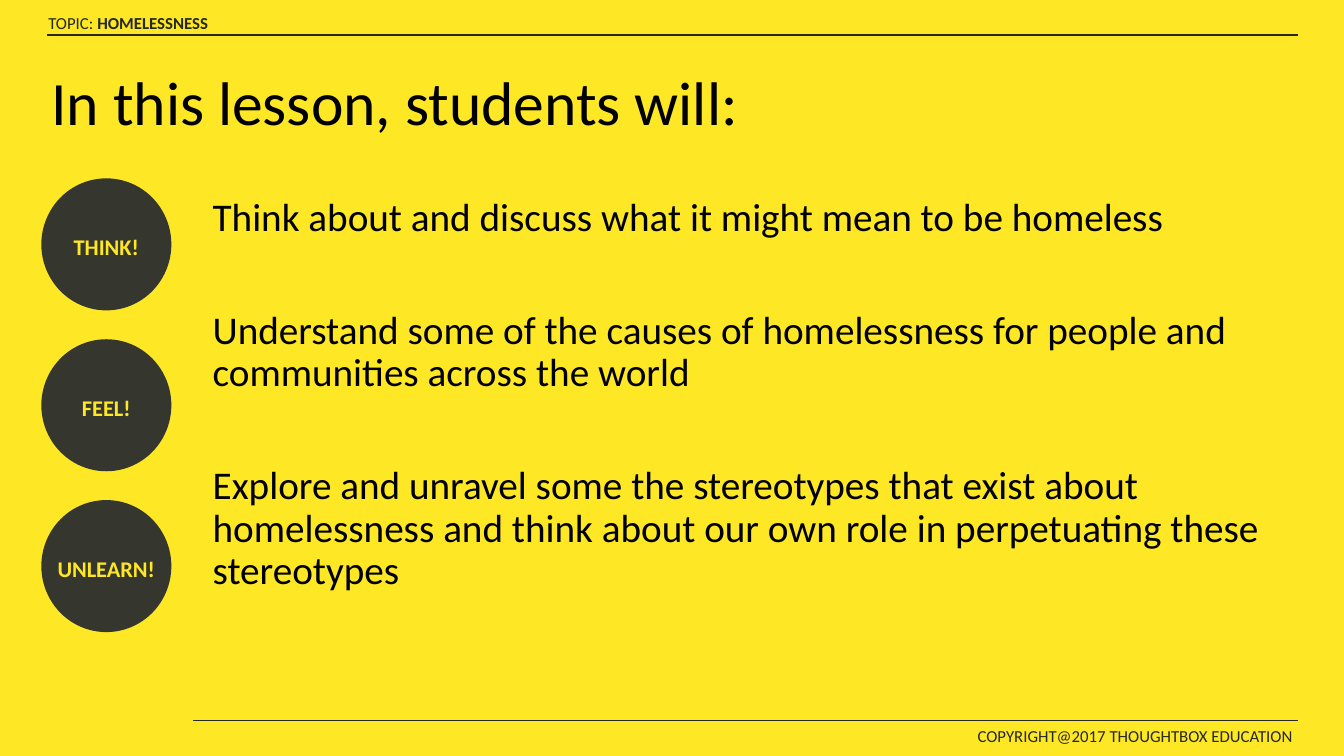
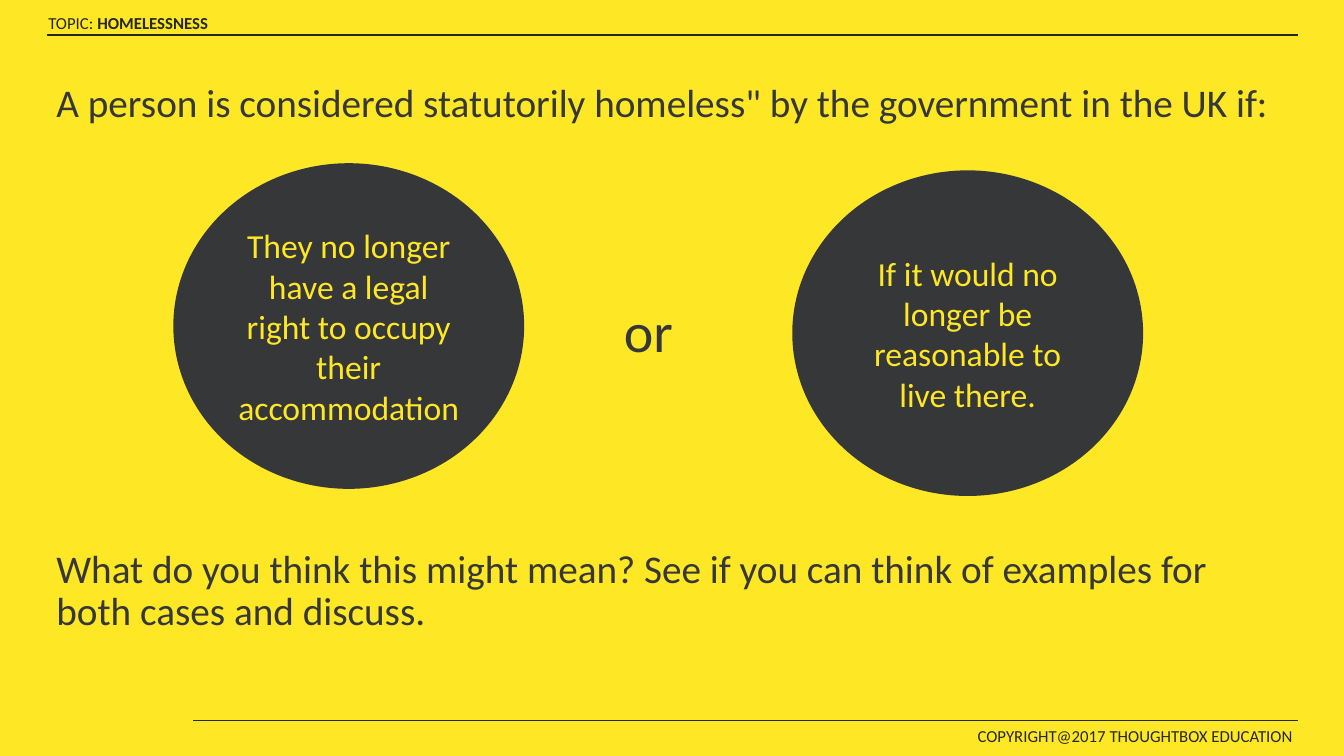
from pptx import Presentation
from pptx.dml.color import RGBColor
from pptx.enum.shapes import MSO_CONNECTOR, MSO_SHAPE
from pptx.enum.text import MSO_ANCHOR, MSO_AUTO_SIZE, PP_ALIGN
from pptx.oxml.xmlchemy import OxmlElement
from pptx.util import Pt

STRAIGHT = MSO_CONNECTOR.STRAIGHT
OVAL = MSO_SHAPE.OVAL
LEFT = PP_ALIGN.LEFT
CENTER = PP_ALIGN.CENTER
MIDDLE = MSO_ANCHOR.MIDDLE
TOP = MSO_ANCHOR.TOP
NO_FIT = MSO_AUTO_SIZE.NONE

FONT = "Calibri"
YELLOW = "FEE725"
BLACK = "000000"
RULE = "252823"
OLIVE = "35372F"
SLATE = "353739"


def color(value):
    return RGBColor.from_string(value)


def write(shape, frame, lines, size, ink, align=LEFT, anchor=TOP, spacing=1.0, gap=0, bold=False):
    shape.left, shape.top, shape.width, shape.height = [Pt(length) for length in frame]
    text_frame = shape.text_frame
    text_frame.text = "\n".join(lines)
    text_frame.word_wrap = True
    text_frame.auto_size = NO_FIT
    text_frame.vertical_anchor = anchor
    for number, para in enumerate(text_frame.paragraphs):
        para.alignment = align
        para.line_spacing = spacing
        para.space_before = Pt(gap if number else 0)
        for span in para.runs:
            span.font.name = FONT
            span.font.size = Pt(size)
            span.font.bold = bold
            span.font.color.rgb = color(ink)


deck = Presentation()
deck.slide_width = Pt(960)
deck.slide_height = Pt(540)

master = deck.slide_master
master.background.fill.solid()
master.background.fill.fore_color.rgb = color(YELLOW)
master.element.xpath(".//p:titleStyle/a:lvl1pPr")[0].set("algn", "l")
body_level = master.element.xpath(".//p:bodyStyle/a:lvl1pPr")[0]
body_level.set("marL", "0")
body_level.set("indent", "0")
bullet = master.element.xpath(".//p:bodyStyle/a:lvl1pPr/a:buChar")[0]
body_level.replace(bullet, OxmlElement("a:buNone"))

layout = deck.slide_layouts[1]
for holder in list(layout.placeholders)[2:]:
    layout.shapes.element.remove(holder.element)

lesson = deck.slides.add_slide(layout)
question = deck.slides.add_slide(layout)

topic = lesson.shapes.add_textbox(0, 0, 0, 0)
write(topic, (27.4, 5.8, 150, 21.6), ["TOPIC: "], 12, RULE)
span = topic.text_frame.paragraphs[0].add_run()
span.text = "HOMELESSNESS"
span.font.name = FONT
span.font.size = Pt(12)
span.font.bold = True
span.font.color.rgb = color(RULE)

footer = lesson.shapes.add_textbox(0, 0, 0, 0)
write(footer, (691.2, 514.8, 244.8, 22.3), ["COPYRIGHT@2017 THOUGHTBOX EDUCATION"], 12, RULE)

bands = [topic, footer]
for start, height in ((33.8, 25), (138.2, 514.8)):
    rule = lesson.shapes.add_connector(STRAIGHT, Pt(start), Pt(height), Pt(927.4), Pt(height))
    rule.line.color.rgb = color(RULE)
    rule.line.width = Pt(1)
    rule.element.spPr.append(OxmlElement("a:effectLst"))
    bands.append(rule)
for band in bands:
    layout.shapes.element.append(band.element)

write(lesson.shapes.title, (29.5, 23, 828, 104.4), ["In this lesson, students will:"],
      44, BLACK, anchor=MIDDLE, spacing=0.9)
write(lesson.placeholders[1], (144.7, 137.5, 785.5, 342.7), [
    "Think about and discuss what it might mean to be homeless",
    "Understand some of the causes of homelessness for people and communities across the world",
    "Explore and unravel some the stereotypes that exist about homelessness and think about "
    "our own role in perpetuating these stereotypes",
], 28, BLACK, spacing=0.9, gap=50.5)

write(question.shapes.title, (33.1, 28, 894.2, 93.6),
      ['A person is considered statutorily homeless" by the government in the UK if:'],
      28, SLATE, anchor=MIDDLE, spacing=0.9)
prompt = question.placeholders[1]
write(prompt, (33.1, 213.8, 869, 300), [
    "or ",
    "What do you think this might mean? See if you can think of examples for both cases and discuss.",
], 28, SLATE, spacing=0.9, gap=132)
joiner = prompt.text_frame.paragraphs[0]
joiner.alignment = CENTER
joiner.runs[0].font.size = Pt(40)

circles = [
    (lesson, (29.5, 127.4 + 114.9 * row, 92.9, 94.3), label, 16, OLIVE, 1.15, True)
    for row, label in enumerate(("THINK!", "FEEL!", "UNLEARN!"))
]
circles += [
    (question, (123.8, 116.6, 250.6, 232.6),
     "They no longer have a legal right to occupy their accommodation", 24, SLATE, 1.0, False),
    (question, (565.9, 121.7, 250.6, 232.6),
     "If it would no longer be reasonable to live there.", 24, SLATE, 1.0, False),
]
for page, frame, label, size, fill, spacing, is_badge in circles:
    circle = page.shapes.add_shape(OVAL, 0, 0, 0, 0)
    circle.shadow.inherit = False
    circle.fill.solid()
    circle.fill.fore_color.rgb = color(fill)
    circle.line.fill.background()
    write(circle, frame, [label], size, YELLOW, CENTER, MIDDLE, spacing, bold=is_badge)
    circle.text_frame.word_wrap = not is_badge

deck.save("out.pptx")
